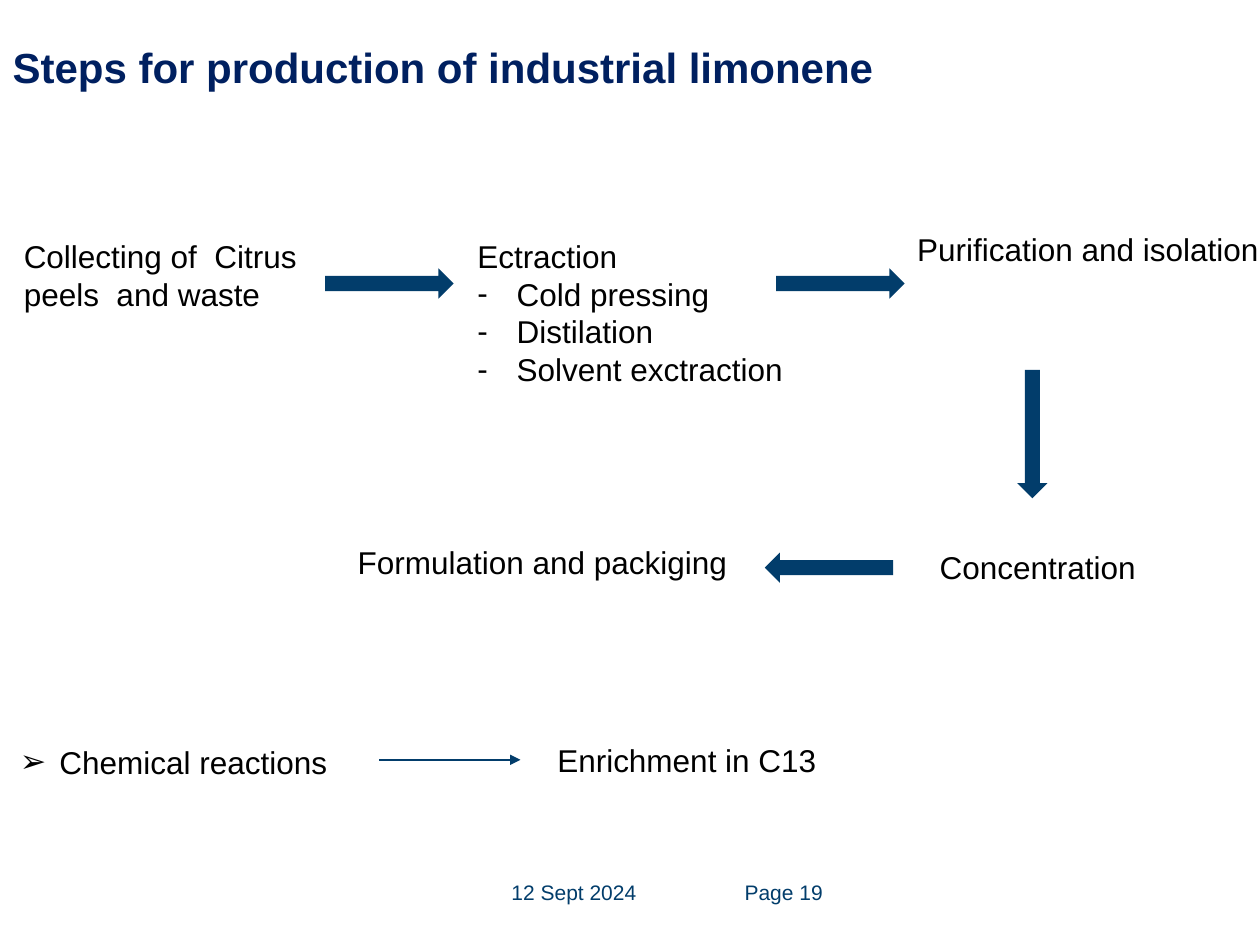
from dataclasses import dataclass

from lxml.etree import SubElement
from pptx import Presentation
from pptx.dml.color import RGBColor as RGB
from pptx.enum.shapes import MSO_CONNECTOR as Connector, MSO_SHAPE as Shape
from pptx.enum.text import MSO_ANCHOR as Anchor, PP_ALIGN as Align
from pptx.oxml.ns import qn
from pptx.util import Pt


@dataclass(frozen=True)
class Theme:
    font: str = "Arial"
    title_color: RGB = RGB(0x00, 0x20, 0x60)
    accent: RGB = RGB(0x02, 0x3D, 0x6B)
    ink: RGB = RGB(0, 0, 0)
    title_size: int = 24
    body_size: int = 18
    footer_size: int = 12


class ProcessSlide:
    INDENT = Pt(22.5)
    ARROW_LENGTH, ARROW_THICKNESS = 73.4, 17.3

    def __init__(self, deck, theme):
        self.theme = theme
        self.slide = deck.slides.add_slide(deck.slide_layouts[5])

    def add_text(self, paragraph, text, size, color, bold=False):
        run = paragraph.add_run()
        run.text = text
        run.font.name = self.theme.font
        run.font.size = Pt(size)
        run.font.bold = bold
        run.font.color.rgb = color

    def title(self, text, left, top, width, height):
        title = self.slide.shapes.title
        title.left, title.top = Pt(left), Pt(top)
        title.width, title.height = Pt(width), Pt(height)
        frame = title.text_frame
        frame.vertical_anchor = Anchor.MIDDLE
        frame.paragraphs[0].alignment = Align.LEFT
        self.add_text(frame.paragraphs[0], text, self.theme.title_size,
                      self.theme.title_color, bold=True)

    def text_frame(self, left, top, width, height):
        box = self.slide.shapes.add_textbox(Pt(left), Pt(top), Pt(width), Pt(height))
        box.text_frame.word_wrap = True
        return box.text_frame

    def footer(self, text, left, top, width):
        frame = self.text_frame(left, top, width, 17.3)
        frame.margin_left = frame.margin_right = 0
        frame.margin_top = frame.margin_bottom = 0
        self.add_text(frame.paragraphs[0], text, self.theme.footer_size, self.theme.accent)

    def step(self, left, top, width, height, heading=None, items=(), bullet="-"):
        """Add a process step: an optional heading, then bulleted items."""
        frame = self.text_frame(left, top, width, height)
        lines = [(heading, False)] if heading else []
        lines += [(item, True) for item in items]
        for index, (text, bulleted) in enumerate(lines):
            paragraph = frame.add_paragraph() if index else frame.paragraphs[0]
            if bulleted:
                self.add_bullet(paragraph, bullet)
            self.add_text(paragraph, text, self.theme.body_size, self.theme.ink)

    def add_bullet(self, paragraph, character):
        properties = paragraph._p.get_or_add_pPr()
        properties.set("marL", str(self.INDENT))
        properties.set("indent", str(-self.INDENT))
        SubElement(properties, qn("a:buFont"), typeface=self.theme.font)
        SubElement(properties, qn("a:buChar"), char=character)

    def block_arrow(self, left, top, rotation=0):
        arrow = self.slide.shapes.add_shape(
            Shape.RIGHT_ARROW, Pt(left), Pt(top),
            Pt(self.ARROW_LENGTH), Pt(self.ARROW_THICKNESS))
        arrow.rotation = rotation
        arrow.shadow.inherit = False
        arrow.fill.solid()
        arrow.fill.fore_color.rgb = self.theme.accent
        arrow.line.fill.background()

    def line_arrow(self, start, end, y):
        connector = self.slide.shapes.add_connector(
            Connector.STRAIGHT, Pt(start), Pt(y), Pt(end), Pt(y))
        connector.line.color.rgb = self.theme.accent
        connector.line.width = Pt(1)
        properties = connector._element.spPr
        SubElement(properties.find(qn("a:ln")), qn("a:tailEnd"), type="triangle")
        SubElement(properties, qn("a:effectLst"))


def main():
    deck = Presentation()
    deck.slide_width, deck.slide_height = Pt(720), Pt(540)
    page = ProcessSlide(deck, Theme())

    page.footer("12 Sept 2024", 292.3, 502.6, 122.4)
    page.footer("Page 19", 425.5, 502.6, 79.2)
    page.title("Steps for production of industrial limonene", 0, 20.2, 711.4, 36)

    page.step(6.5, 131.8, 174.2, 51, "Collecting of  Citrus peels  and waste")
    page.block_arrow(185.8, 153.4)
    page.step(265.7, 131.8, 208.8, 116.6, "Ectraction",
              ["Cold pressing", "Distilation", "Solvent exctraction"])
    page.block_arrow(443.5, 153.4)
    page.step(517, 127.8, 364.3, 29, "Purification and isolation")
    page.block_arrow(553.2, 239.4, rotation=90)
    page.step(529.9, 309.6, 444.2, 29, "Concentration")
    page.block_arrow(437, 315.7, rotation=180)
    page.step(197.3, 306.7, 491.8, 29, "Formulation and packiging")

    page.step(4.3, 420.8, 193, 29, items=["Chemical reactions"], bullet="➢")
    page.line_arrow(216.7, 297.4, 434.2)
    page.step(311.4, 419.8, 199.4, 29, "Enrichment in C13")

    deck.save("out.pptx")


if __name__ == "__main__":
    main()
